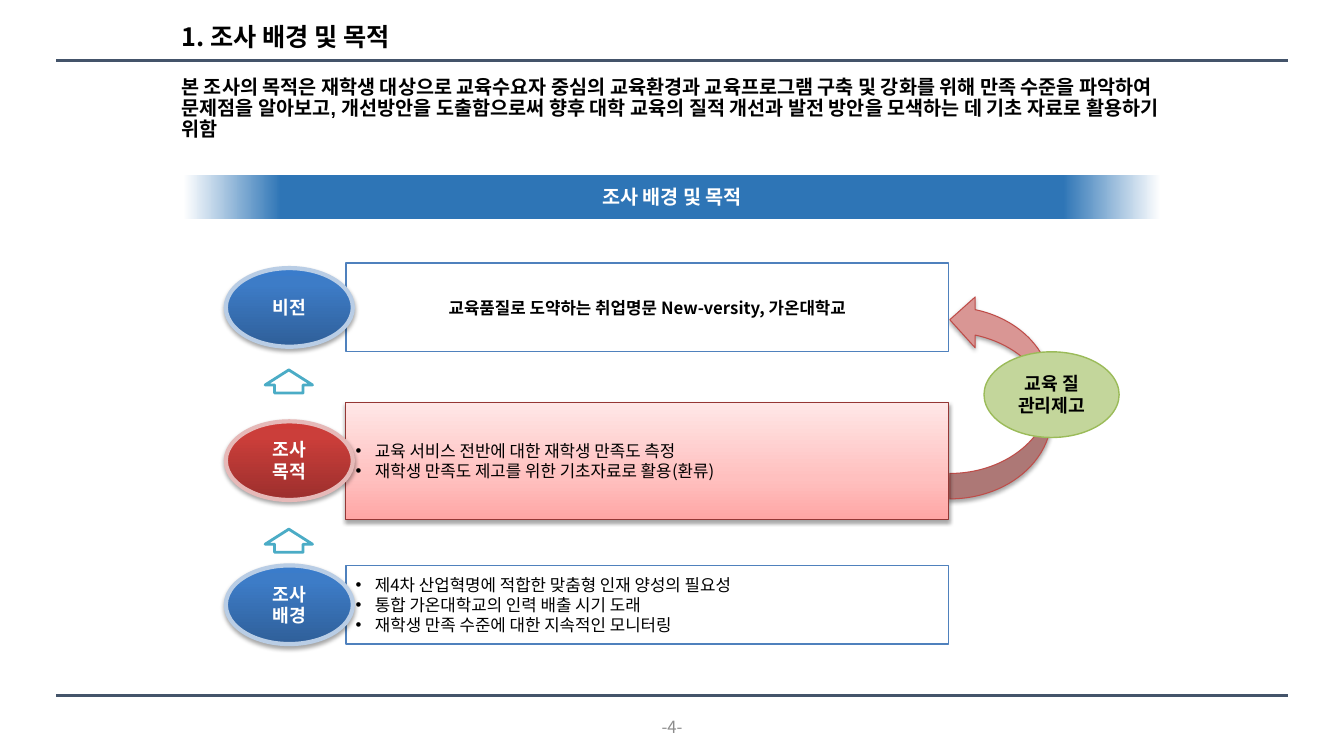
from lxml import etree
from pptx import Presentation, util as u
from pptx.dml.color import RGBColor
from pptx.enum import shapes, text
from pptx.oxml import ns

PX = 9144  # EMU per px, 100 px to the inch
SANS = "Noto Sans CJK KR"
BLACK = RGBColor(0, 0, 0)
WHITE = RGBColor(255, 255, 255)
GRAY = RGBColor(0x8C, 0x8C, 0x8C)
NAVY = RGBColor(0x44, 0x54, 0x6A)
BLUE = RGBColor(0x4F, 0x81, 0xBD)
PALE_BLUE = RGBColor(0xB9, 0xCD, 0xE5)
BANNER_BLUE = RGBColor(0x2E, 0x75, 0xB6)
TEAL = RGBColor(0x4B, 0xAC, 0xC6)
DARK_RED = RGBColor(0x95, 0x37, 0x35)
RED = RGBColor(0xBF, 0x4C, 0x48)
ROSE = RGBColor(0xD9, 0x96, 0x94)
PALE_ROSE = RGBColor(0xE6, 0xB9, 0xB8)
GREEN = RGBColor(0x9B, 0xBB, 0x59)
PALE_GREEN = RGBColor(0xC3, 0xD6, 0x9B)

# Gradients: (position in percent, colour)
BLUE_OVAL = [(0, RGBColor(0x2F, 0x5F, 0x99)), (80, RGBColor(0x3D, 0x7C, 0xC7)),
             (100, RGBColor(0x3A, 0x7C, 0xCB))]
RED_OVAL = [(0, RGBColor(0x9C, 0x2F, 0x2D)), (80, RGBColor(0xCB, 0x3E, 0x3A)),
            (100, RGBColor(0xCE, 0x3B, 0x37))]
PINK_BOX = [(0, RGBColor(0xFF, 0xA6, 0xA5)), (35, RGBColor(0xFF, 0xC0, 0xBF)),
            (100, RGBColor(0xFF, 0xE7, 0xE7))]
BANNER_FADE = [(0, WHITE), (10, BANNER_BLUE), (90, BANNER_BLUE), (100, WHITE)]

SHAPE = shapes.MSO_SHAPE
ALIGN = text.PP_ALIGN
MIDDLE = text.MSO_ANCHOR.MIDDLE


def child(parent, tag, **attributes):
    return etree.SubElement(parent, ns.qn(tag), {k: str(v) for k, v in attributes.items()})


def emu(*lengths):
    return [u.Emu(length * PX) for length in lengths]


def write(frame, lines, size=12, color=BLACK, bold=False, font=SANS, align=ALIGN.CENTER,
          anchor=MIDDLE, wrap=True, bullet=False, spacing=None, after=0):
    frame.auto_size = text.MSO_AUTO_SIZE.NONE
    frame.word_wrap = wrap
    frame.vertical_anchor = anchor
    for i, line in enumerate(lines):
        para = frame.add_paragraph() if i else frame.paragraphs[0]
        para.alignment = align
        para.line_spacing = spacing
        para.space_before, para.space_after = u.Pt(0), u.Pt(after)
        props = para._p.get_or_add_pPr()
        indent = 19 * PX if bullet else 0
        props.set("marL", str(indent))
        props.set("indent", str(-indent))
        if bullet:
            child(props, "a:buFont", typeface="Arial")
            child(props, "a:buChar", char="•")
        else:
            child(props, "a:buNone")
        run = para.add_run()
        run.text = line
        run.font.size, run.font.bold, run.font.name = u.Pt(size), bold, font
        run.font.color.rgb = color
        child(run._r.get_or_add_rPr(), "a:ea", typeface=SANS)


def draw(slide, kind, box, fill, line=None, width=1, angle=90, shadow=False):
    """Add a preset shape; a list as fill is a gradient."""
    shape = slide.shapes.add_shape(kind, *emu(*box))
    if isinstance(fill, list):
        shape.fill.gradient()
        shape.fill.gradient_angle = angle
        stops = shape._element.spPr.find(".//" + ns.qn("a:gsLst"))
        for stop in list(stops):
            stops.remove(stop)
        for position, color in fill:
            child(child(stops, "a:gs", pos=position * 1000), "a:srgbClr", val=color)
    else:
        shape.fill.solid()
        shape.fill.fore_color.rgb = fill
    if line is None:
        shape.line.fill.background()
    else:
        shape.line.color.rgb = line
        shape.line.width = u.Pt(width)
    shape.shadow.inherit = False
    if shadow:
        effects = shape._element.spPr.find(ns.qn("a:effectLst"))
        outer = child(effects, "a:outerShdw", blurRad=u.Pt(3.1), dist=u.Pt(1.8),
                      dir=5400000, rotWithShape=0)
        child(child(outer, "a:srgbClr", val=BLACK), "a:alpha", val=35000)
    return shape


def frame_rules(slide, left, right, heights):
    for y in heights:
        rule = slide.shapes.add_connector(shapes.MSO_CONNECTOR.STRAIGHT,
                                          *emu(left, y, right, y))
        rule.line.color.rgb = NAVY
        rule.line.width = u.Pt(2)
        child(rule._element.spPr, "a:effectLst")


def heading(slide, x, y):
    title, summary = slide.shapes.title, slide.placeholders[1]
    title.left, title.top, title.width, title.height = emu(x, y, 254, 37)
    write(title.text_frame, ["1. 조사 배경 및 목적"], size=18, bold=True,
          align=ALIGN.LEFT, spacing=0.9)
    summary.left, summary.top, summary.width, summary.height = emu(x, y + 52, 992, 74)
    write(summary.text_frame,
          ["본 조사의 목적은 재학생 대상으로 교육수요자 중심의 교육환경과 교육프로그램 구축 및 강화를 위해 "
           "만족 수준을 파악하여 문제점을 알아보고, 개선방안을 도출함으로써 향후 대학 교육의 질적 개선과 "
           "발전 방안을 모색하는 데 기초 자료로 활용하기 위함"],
          size=14, bold=True, font="Arial", align=ALIGN.LEFT,
          anchor=text.MSO_ANCHOR.TOP, spacing=0.9, after=3)


def banner(slide, box):
    strip = draw(slide, SHAPE.RECTANGLE, box, BANNER_FADE, angle=0)
    write(strip.text_frame, ["조사 배경 및 목적"], size=14, color=WHITE, bold=True, font="Arial")


def feedback_loop(slide, x, y):
    arrow = draw(slide, SHAPE.CURVED_LEFT_ARROW, (x, y, 101, 203), ROSE, RED, 0.75, shadow=True)
    arrow._element.spPr.find(ns.qn("a:xfrm")).set("flipV", "1")
    quality = draw(slide, SHAPE.OVAL, (x + 34, y + 57, 134, 85), PALE_GREEN, GREEN)
    write(quality.text_frame, ["교육 질 관리제고"], size=13, bold=True)


def stage(slide, x, y, height, label, lines, key=False, **style):
    """A content box with its label oval centred on the left edge."""
    if key:
        content = draw(slide, SHAPE.RECTANGLE, (x + 119, y, 598, height), PINK_BOX,
                       DARK_RED, 0.75, shadow=True)
    else:
        content = draw(slide, SHAPE.RECTANGLE, (x + 119, y, 598, height), WHITE, BLUE)
    write(content.text_frame, lines, **style)
    oval = draw(slide, SHAPE.OVAL, (x, y + (height - 78) // 2, 126, 78),
                RED_OVAL if key else BLUE_OVAL, PALE_ROSE if key else PALE_BLUE, 3, shadow=True)
    write(oval.text_frame, label, size=13, color=WHITE, bold=True)


def step_arrow(slide, x, y):
    arrow = draw(slide, SHAPE.UP_ARROW, (x, y, 47, 23), WHITE, TEAL, 2)
    arrow.adjustments[0], arrow.adjustments[1] = 0.6, 0.65


def page_number(slide, box):
    number = slide.shapes.add_textbox(*emu(*box))
    write(number.text_frame, ["-4-"], color=GRAY, wrap=False)


def main():
    deck = Presentation()
    deck.slide_width, deck.slide_height = emu(1333, 750)
    slide = deck.slides.add_slide(deck.slide_layouts[1])

    # Page frame and heading
    frame_rules(slide, 56, 1277, (60, 690))
    heading(slide, 170, 20)
    page_number(slide, (639, 706, 55, 30))

    # Diagram
    banner(slide, (182, 174, 969, 43))
    feedback_loop(slide, 942, 292)
    points = dict(align=ALIGN.LEFT, bullet=True)
    stage(slide, 224, 261, 88, ["비전"],
          ["교육품질로 도약하는 취업명문 New-versity, 가온대학교"], bold=True, after=3)
    stage(slide, 224, 399, 116, ["조사", "목적"],
          ["교육 서비스 전반에 대한 재학생 만족도 측정",
           "재학생 만족도 제고를 위한 기초자료로 활용(환류)"], key=True, **points)
    stage(slide, 224, 561, 78, ["조사", "배경"],
          ["제4차 산업혁명에 적합한 맞춤형 인재 양성의 필요성",
           "통합 가온대학교의 인력 배출 시기 도래",
           "재학생 만족 수준에 대한 지속적인 모니터링"], **points)
    for y in (367, 525):
        step_arrow(slide, 263, y)

    deck.save("out.pptx")


if __name__ == "__main__":
    main()
